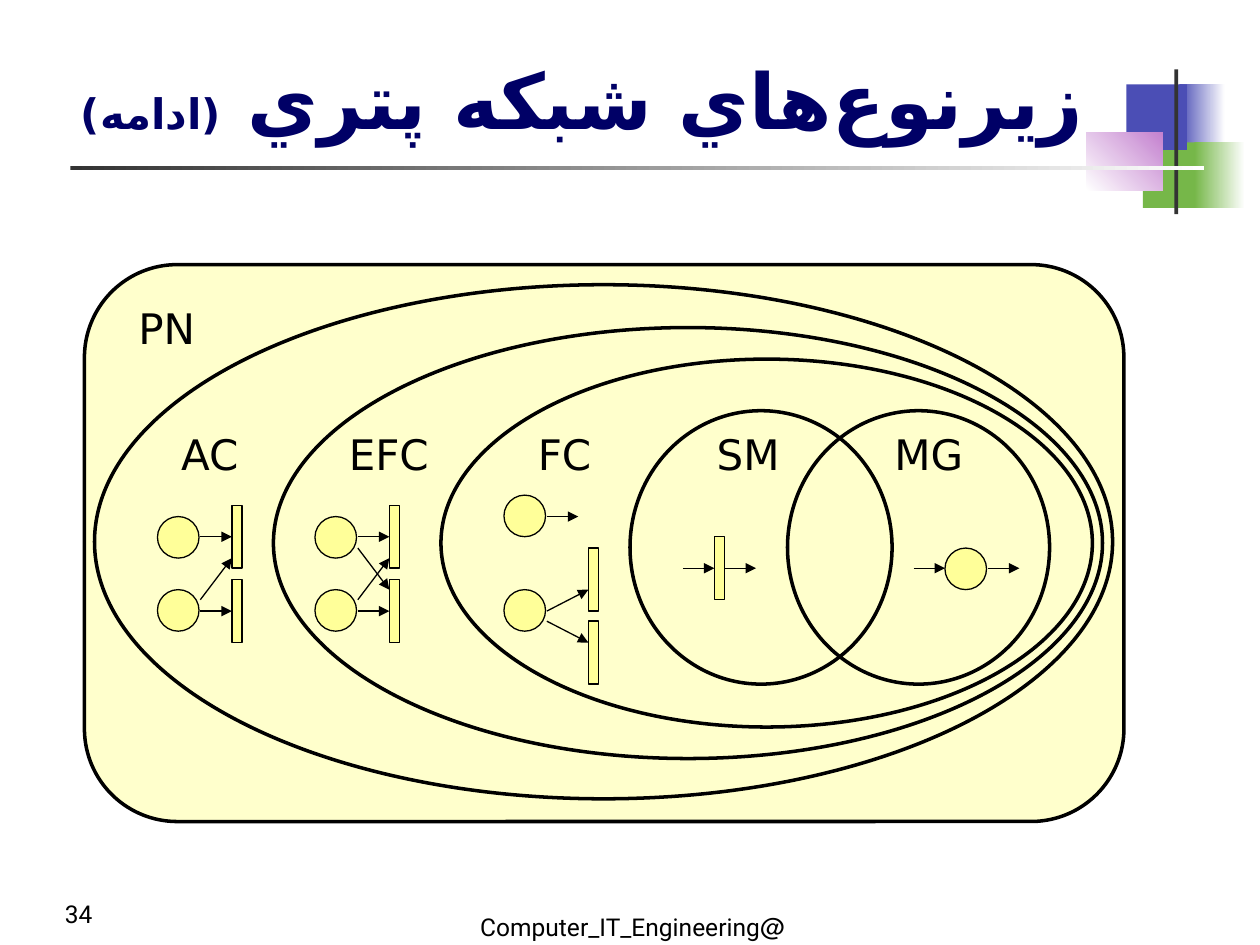
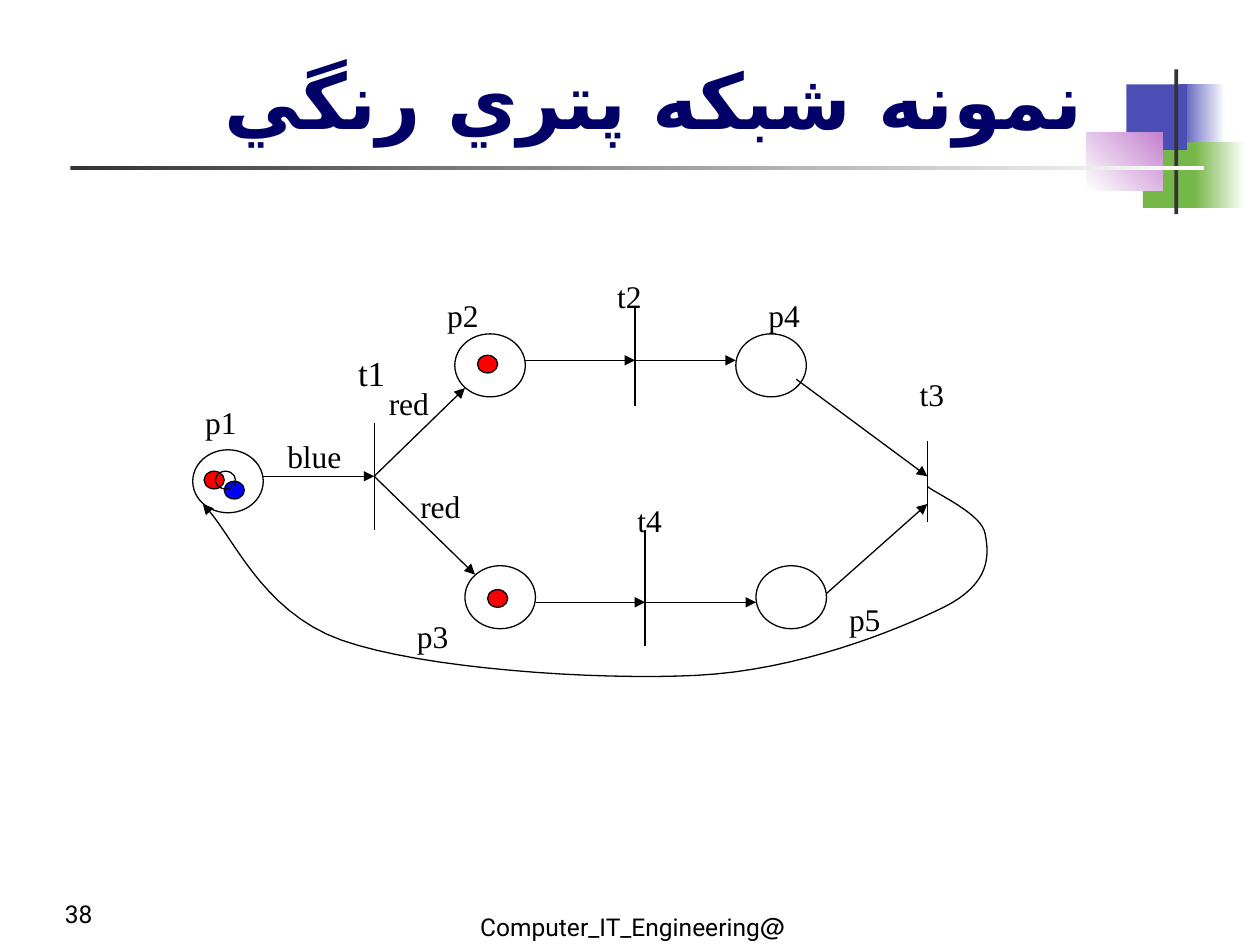
"""Build two slides about Petri net subclasses and a coloured Petri net."""
from lxml import etree
from pptx import Presentation
from pptx.dml.color import RGBColor
from pptx.enum.shapes import MSO_CONNECTOR, MSO_SHAPE
from pptx.enum.text import MSO_ANCHOR, MSO_AUTO_SIZE, PP_ALIGN
from pptx.oxml.ns import qn
from pptx.util import Inches, Pt

RECT, OVAL, ROUNDED = MSO_SHAPE.RECTANGLE, MSO_SHAPE.OVAL, MSO_SHAPE.ROUNDED_RECTANGLE
STRAIGHT = MSO_CONNECTOR.STRAIGHT
LEFT, CENTER, RIGHT = PP_ALIGN.LEFT, PP_ALIGN.CENTER, PP_ALIGN.RIGHT
TOP, MIDDLE, BOTTOM = MSO_ANCHOR.TOP, MSO_ANCHOR.MIDDLE, MSO_ANCHOR.BOTTOM
NO_AUTOFIT = MSO_AUTO_SIZE.NONE
LEFT_SIDE, RIGHT_SIDE = 1, 3

BLACK = RGBColor(0x00, 0x00, 0x00)
WHITE = RGBColor(0xFF, 0xFF, 0xFF)
NAVY = RGBColor(0x00, 0x00, 0x66)
INDIGO = RGBColor(0x4B, 0x4E, 0xB5)
GREEN = RGBColor(0x76, 0xB7, 0x49)
PINK = RGBColor(0xC4, 0x81, 0xCF)
CHARCOAL = RGBColor(0x33, 0x33, 0x33)
CREAM = RGBColor(0xFF, 0xFF, 0xCC)
YELLOW = RGBColor(0xFF, 0xFF, 0x99)
RED = RGBColor(0xFF, 0x00, 0x00)
BLUE = RGBColor(0x00, 0x00, 0xFF)

SANS, SERIF, FOOTER_FONT = "DejaVu Sans", "Times New Roman", "Roboto"
NON_JOINER = chr(0x200C)
THIN, THICK = 0.75, 2
PLACE, BAR_WIDTH, BAR_HEIGHT = 0.33, 0.08, 0.5


def add_figure(slide, kind, box, fill=None, line=None):
    """Add a preset shape; fill is None, a colour, or (start, end, angle)."""
    figure = slide.shapes.add_shape(kind, *map(Inches, box))
    figure.shadow.inherit = False
    if fill is None:
        figure.fill.background()
    elif isinstance(fill, RGBColor):
        figure.fill.solid()
        figure.fill.fore_color.rgb = fill
    else:
        figure.fill.gradient()
        figure.fill.gradient_angle = fill[2]
        for stop, colour in zip(figure.fill.gradient_stops, fill):
            stop.color.rgb = colour
    if line:
        draw_outline(figure, line)
    else:
        figure.line.fill.background()
    return figure


def draw_outline(figure, width, head=False):
    """Give a black outline, with an arrowhead at its end if asked."""
    figure.line.color.rgb = BLACK
    figure.line.width = Pt(width)
    if head:
        outline = figure.element.spPr.find(qn("a:ln"))
        etree.SubElement(outline, qn("a:tailEnd"), type="triangle")


def add_line(slide, start, end, head=True, from_bar=None, to_bar=None):
    """Draw a straight arc or bar, joined to transition bars where given."""
    arc = slide.shapes.add_connector(STRAIGHT, *map(Inches, (*start, *end)))
    draw_outline(arc, THIN, head)
    etree.SubElement(arc.element.spPr, qn("a:effectLst"))
    if from_bar is not None:
        arc.begin_connect(from_bar, RIGHT_SIDE)
    if to_bar is not None:
        arc.end_connect(to_bar, LEFT_SIDE)


def add_label(slide, text, box, size, font, align=LEFT, anchor=TOP, wrap=True):
    """Add a one-line black label and return its paragraph."""
    frame = slide.shapes.add_textbox(*map(Inches, box)).text_frame
    frame.word_wrap = wrap
    frame.vertical_anchor = anchor
    paragraph = frame.paragraphs[0]
    paragraph.text = text
    paragraph.alignment = align
    paragraph.font.size = Pt(size)
    paragraph.font.name = font
    paragraph.font.color.rgb = BLACK
    return paragraph


def set_right_to_left(paragraph):
    """Make a paragraph run from right to left."""
    paragraph._p.get_or_add_pPr().set("rtl", "1")


def add_title(slide, *runs):
    """Fill the title placeholder with (text, size) runs."""
    title = slide.shapes.title
    title.left, title.top, title.width, title.height = map(Inches, (0.51, 0.28, 8.19, 0.92))
    frame = title.text_frame
    frame.auto_size = NO_AUTOFIT
    frame.vertical_anchor = BOTTOM
    paragraph = frame.paragraphs[0]
    for text, size in runs:
        run = paragraph.add_run()
        run.text = text
        run.font.size = Pt(size)
    paragraph.alignment = RIGHT
    paragraph.font.bold = True
    paragraph.font.color.rgb = NAVY
    paragraph.font.name = SERIF
    set_right_to_left(paragraph)
    defaults = paragraph._p.pPr.find(qn("a:defRPr"))
    etree.SubElement(defaults, qn("a:cs"), typeface=SANS)


def start_slide(deck, number, *title_runs):
    """Add a slide with the shared corner motif, title, number and footer."""
    slide = deck.slides.add_slide(deck.slide_layouts[5])
    for box, fill in (
        ((9.36, 0.67, 0.36, 0.52), (INDIGO, WHITE, 0)),
        ((9.07, 1.13, 0.46, 0.52), GREEN),
        ((8.94, 0.67, 0.48, 0.52), INDIGO),
        ((9.48, 1.13, 0.4, 0.52), (GREEN, WHITE, 0)),
        ((8.62, 1.05, 0.61, 0.46), (WHITE, PINK, 45)),
        ((9.32, 0.55, 0.03, 1.15), CHARCOAL),
        ((0.56, 1.32, 9, 0.03), (CHARCOAL, WHITE, 0)),
    ):
        add_figure(slide, RECT, box, fill)
    add_title(slide, *title_runs)
    add_label(slide, number, (0.27, 7, 0.71, 0.5), 14, FOOTER_FONT, CENTER, MIDDLE)
    footer = add_label(slide, "@Computer_IT_Engineering", (3.68, 7.19, 2.65, 0.34),
                       14, FOOTER_FONT, RIGHT, wrap=False)
    set_right_to_left(footer)
    return slide


def add_place(slide, left, top):
    """Add a small yellow place."""
    add_figure(slide, OVAL, (left, top, PLACE, PLACE), YELLOW, THIN)


def add_bar(slide, left, top):
    """Add a small yellow transition bar."""
    return add_figure(slide, RECT, (left, top, BAR_WIDTH, BAR_HEIGHT), YELLOW, THIN)


def add_choice_net(slide, left, crossed):
    """Add two places feeding two transitions, with one or two diagonals."""
    arc_start, arc_end = left + 0.34, left + 0.59
    for place_top, bar_top, arc_y in ((4.1, 4.01, 4.26), (4.68, 4.6, 4.85)):
        add_place(slide, left, place_top)
        bar = add_bar(slide, arc_end, bar_top)
        add_line(slide, (arc_start, arc_y), (arc_end, arc_y), to_bar=bar)
    add_line(slide, (arc_start, 4.76), (arc_end, 4.43))
    if crossed:
        add_line(slide, (arc_start, 4.35), (arc_end, 4.68))


def add_free_choice_net(slide):
    """Add the free-choice example."""
    add_place(slide, 4, 3.93)
    add_line(slide, (4.34, 4.1), (4.59, 4.1))
    add_place(slide, 4, 4.68)
    for bar_top, start_y, end_y in ((4.35, 4.85, 4.68), (4.93, 4.93, 5.1)):
        add_bar(slide, 4.67, bar_top)
        add_line(slide, (4.34, start_y), (4.67, end_y))


def build_subclasses(deck):
    """Build the nested diagram of Petri net subclasses."""
    slide = start_slide(deck, "34", (f"زيرنوع{NON_JOINER}هاي شبكه پتري ", 44), ("(ادامه)", 24))
    add_figure(slide, ROUNDED, (0.67, 2.1, 8.25, 4.42), CREAM, THICK)
    for region in ((0.75, 2.26, 8.08, 4.08), (2.17, 2.6, 6.58, 3.42),
                   (3.5, 2.85, 5.17, 2.92), (5, 3.26, 2.08, 2.17),
                   (6.25, 3.26, 2.08, 2.17)):
        add_figure(slide, OVAL, region, line=THICK)
    for name, left, top in (("PN", 1, 2.35), ("AC", 1.34, 3.35), ("EFC", 2.67, 3.35),
                            ("FC", 4.17, 3.35), ("SM", 5.59, 3.35), ("MG", 7, 3.35)):
        add_label(slide, name, (left, top, 1, 0.5), 24, SANS)

    add_choice_net(slide, 1.25, crossed=False)
    add_choice_net(slide, 2.5, crossed=True)
    add_free_choice_net(slide)
    machine_bar = add_bar(slide, 5.67, 4.26)
    add_line(slide, (5.42, 4.51), (5.67, 4.51), to_bar=machine_bar)
    add_line(slide, (5.75, 4.51), (6, 4.51), from_bar=machine_bar)
    add_place(slide, 7.5, 4.35)
    for start_x in (7.25, 7.84):
        add_line(slide, (start_x, 4.51), (start_x + 0.25, 4.51))


def curve_points(start, segments, steps=16):
    """Yield points along a chain of cubic curves."""
    for first, second, end in segments:
        for step in range(1, steps + 1):
            t = step / steps
            u = 1 - t
            yield tuple(
                Inches(u**3 * a + 3 * u * u * t * b + 3 * u * t * t * c + t**3 * d)
                for a, b, c, d in zip(start, first, second, end))
        start = end


def add_return_arc(slide):
    """Draw the curved arc from t3 back to p1."""
    start = (7.36, 3.86)
    segments = (
        ((7.43, 3.92), (7.8, 4.08), (7.82, 4.24)),
        ((7.85, 4.4), (7.87, 4.63), (7.49, 4.82)),
        ((7.1, 5.01), (6.33, 5.32), (5.53, 5.36)),
        ((4.74, 5.4), (3.36, 5.31), (2.71, 5.08)),
        ((2.06, 4.85), (1.84, 4.22), (1.61, 4)),
    )
    outline = slide.shapes.build_freeform(*map(Inches, start))
    outline.add_line_segments(list(curve_points(start, segments)), close=False)
    arc = outline.convert_to_shape()
    arc.shadow.inherit = False
    arc.fill.background()
    draw_outline(arc, THIN, head=True)


def build_coloured_net(deck):
    """Build the coloured Petri net example."""
    slide = start_slide(deck, "38", ("نمونه شبکه پتري رنگي", 44))
    for left, top in ((1.53, 3.57), (3.61, 2.65), (3.69, 4.49), (6, 4.49), (5.84, 2.65)):
        add_figure(slide, OVAL, (left, top, 0.56, 0.5), line=THIN)
    for x, top, bottom in ((2.97, 3.36, 4.21), (5.04, 2.44, 3.22),
                           (5.12, 4.21, 5.13), (7.36, 3.5, 4.14)):
        add_line(slide, (x, top), (x, bottom), head=False)
    for start, end in (
        ((2.09, 3.78), (2.97, 3.78)),
        ((2.97, 3.78), (3.69, 3.08)),
        ((2.97, 3.78), (3.77, 4.56)),
        ((4.17, 2.86), (5.04, 2.86)),
        ((5.04, 2.86), (5.84, 2.86)),
        ((4.25, 4.78), (5.12, 4.78)),
        ((5.12, 4.78), (6, 4.78)),
        ((6.32, 3.01), (7.36, 3.78)),
        ((6.56, 4.71), (7.36, 4)),
    ):
        add_line(slide, start, end)
    add_return_arc(slide)

    for name, left, top in (("p1", 1.53, 3.15), ("p2", 3.45, 2.3), ("p3", 3.21, 4.85),
                            ("p4", 6, 2.3), ("p5", 6.64, 4.71), ("t2", 4.8, 2.15),
                            ("t3", 7.2, 2.93), ("t4", 4.96, 3.93)):
        add_label(slide, name, (left, top, 0.5, 0.4), 18, SERIF)
    add_label(slide, "t1", (2.7, 2.74, 0.5, 0.43), 20, SERIF, CENTER)
    for colour_name, left, top in (("blue", 2.12, 3.42), ("red", 2.87, 3), ("red", 3.12, 3.82)):
        add_label(slide, colour_name, (left, top, 0.75, 0.4), 18, SERIF, CENTER)
    for left, top, colour in ((1.62, 3.74, RED), (1.78, 3.82, BLUE), (3.79, 2.82, RED),
                              (3.87, 4.68, RED), (1.71, 3.74, None)):
        add_figure(slide, OVAL, (left, top, 0.16, 0.14), colour, THIN)


def main():
    """Create and save the deck."""
    deck = Presentation()
    deck.slide_width, deck.slide_height = Inches(10), Inches(7.5)
    build_subclasses(deck)
    build_coloured_net(deck)
    deck.save("out.pptx")


if __name__ == "__main__":
    main()
